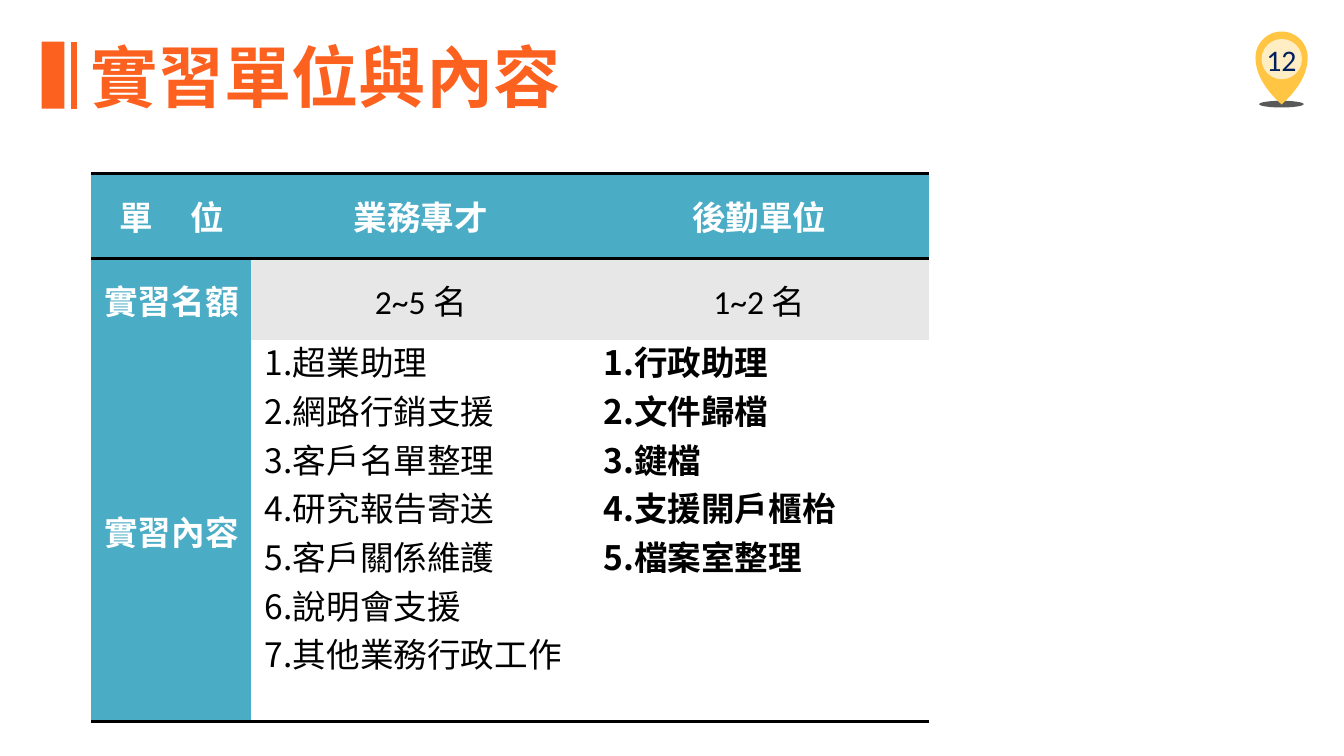
import math
from typing import NamedTuple

import lxml.etree
import pptx
import pptx.dml.color
import pptx.enum.shapes
import pptx.enum.text
import pptx.oxml
import pptx.oxml.ns
import pptx.util

Pt = pptx.util.Pt
Align = pptx.enum.text.PP_ALIGN
Anchor = pptx.enum.text.MSO_ANCHOR
ShapeType = pptx.enum.shapes.MSO_SHAPE
FONT = "Calibri"
COLORS = {
    "orange": "FC611F", "pin": "FFC543", "shadow": "595959", "navy": "002060",
    "teal": "4BACC6", "gray": "E7E7E7", "white": "FFFFFF", "black": "000000",
}
NO_STYLE_NO_GRID = "{2D5ABB26-0587-4C30-8999-92F81FD0307C}"


class Block(NamedTuple):
    kind: int
    left: float
    top: float
    width: float
    height: float
    color: str
    opacity: int = 100


class Cell(NamedTuple):
    lines: list[str]
    fill: str
    color: str
    bold: bool
    numbered: bool = False


class TableRow(NamedTuple):
    height: float
    cells: list[Cell]
    borders: list[str]


def heading(text: str) -> Cell:
    return Cell([text], "teal", "white", True)


def quota(text: str) -> Cell:
    return Cell([text], "gray", "black", False)


def duties(lines: list[str], bold: bool) -> Cell:
    return Cell(lines, "white", "black", bold, True)


BAR = Block(ShapeType.RECTANGLE, 22.3, 22.3, 12.2, 36, "orange")
PIN_SHADOW = Block(ShapeType.OVAL, 674.6, 54, 23.8, 3.6, "shadow")
PIN_WINDOW = Block(ShapeType.OVAL, 675.9, 20.9, 21.6, 21.6, "white", 69)
COLUMN_WIDTHS = [85.7, 181.4, 181.4]
ROWS = [
    TableRow(45.5, [heading("單\t位"), heading("業務專才"), heading("後勤單位")], ["lnT", "lnB"]),
    TableRow(44, [heading("實習名額"), quota("2~5 名"), quota("1~2 名")], []),
    TableRow(204, [
        heading("實習內容"),
        duties(["超業助理", "網路行銷支援", "客戶名單整理", "研究報告寄送",
                "客戶關係維護", "說明會支援", "其他業務行政工作"], False),
        duties(["行政助理", "文件歸檔", "鍵檔", "支援開戶櫃枱", "檔案室整理"], True),
    ], ["lnB"]),
]


def rgb(name: str) -> pptx.dml.color.RGBColor:
    return pptx.dml.color.RGBColor.from_string(COLORS[name])


def add_element(parent, tag: str, **attributes: str):
    return lxml.etree.SubElement(parent, pptx.oxml.ns.qn(tag), attributes)


def format_paragraph(paragraph, size: float, color: str, bold: bool = False,
                     alignment=Align.CENTER) -> None:
    paragraph.alignment = alignment
    font = paragraph.font
    font.name, font.size, font.bold = FONT, Pt(size), bold
    font.color.rgb = rgb(color)


def paint(shape, color: str) -> None:
    shape.shadow.inherit = False
    shape.fill.solid()
    shape.fill.fore_color.rgb = rgb(color)
    shape.line.fill.background()


def add_block(slide, block: Block) -> None:
    shape = slide.shapes.add_shape(block.kind, Pt(block.left), Pt(block.top),
                                   Pt(block.width), Pt(block.height))
    paint(shape, block.color)
    if block.opacity < 100:
        color = shape.fill._xPr.find(".//" + pptx.oxml.ns.qn("a:srgbClr"))
        add_element(color, "a:alpha", val=str(block.opacity * 1000))


def add_pin_body(slide, center_x: float, center_y: float, radius: float, tip_y: float) -> None:
    arc = [(radius * math.cos(angle), center_y - radius * math.sin(angle))
           for angle in (math.pi * step / 32 for step in range(33))]
    controls = [(radius, center_y), (radius, center_y + 11), (5.5, tip_y - 5), (0, tip_y)]
    side = []
    for step in range(1, 13):
        t = step / 12
        weights = [(1 - t) ** 3, 3 * t * (1 - t) ** 2, 3 * t * t * (1 - t), t ** 3]
        side.append(tuple(sum(weight * point[axis] for weight, point in zip(weights, controls))
                          for axis in (0, 1)))
    left_side = [(-x, y) for x, y in side]
    outline = [(Pt(center_x + x), Pt(y)) for x, y in arc + left_side + side[-2::-1]]
    builder = slide.shapes.build_freeform(*outline[0])
    builder.add_line_segments(outline[1:], close=True)
    paint(builder.convert_to_shape(), "pin")


def add_title(slide, text: str) -> None:
    title = slide.shapes.title
    title.left, title.top, title.width, title.height = Pt(39.6), Pt(15.1), Pt(269.3), Pt(51.1)
    frame = title.text_frame
    frame.text = text
    frame.word_wrap = False
    frame.auto_size = pptx.enum.text.MSO_AUTO_SIZE.SHAPE_TO_FIT_TEXT
    frame.vertical_anchor = Anchor.TOP
    format_paragraph(frame.paragraphs[0], 36, "orange", True)


def add_title_rule(slide) -> None:
    rule = slide.shapes.add_connector(pptx.enum.shapes.MSO_CONNECTOR.STRAIGHT,
                                      Pt(39.6), Pt(22.3), Pt(39.6), Pt(58.3))
    rule.line.color.rgb = rgb("orange")
    rule.line.width = Pt(3)
    add_element(rule._element.spPr, "a:effectLst")


def add_page_number(slide, text: str) -> None:
    box = slide.shapes.add_textbox(Pt(602.6), Pt(20.9), Pt(167.8), Pt(21.6))
    box.text_frame.word_wrap = True
    box.text_frame.vertical_anchor = Anchor.MIDDLE
    box.text_frame.text = text
    format_paragraph(box.text_frame.paragraphs[0], 16, "navy")


def fill_cell(cell, content: Cell, borders: list[str]) -> None:
    properties = cell._tc.get_or_add_tcPr()
    for border in borders:
        line = add_element(properties, "a:" + border, w=str(Pt(2)))
        add_element(add_element(line, "a:solidFill"), "a:srgbClr", val=COLORS["black"])
    cell.fill.solid()
    cell.fill.fore_color.rgb = rgb(content.fill)
    cell.text_frame.text = "\n".join(content.lines)
    if not content.numbered:
        cell.vertical_anchor = Anchor.MIDDLE
        cell.margin_left = cell.margin_right = cell.margin_top = cell.margin_bottom = 0
    for index, paragraph in enumerate(cell.text_frame.paragraphs):
        paragraph_properties = paragraph._p.get_or_add_pPr()
        if content.numbered:
            paragraph_properties.set("marL", str(Pt(14.4)))
            paragraph_properties.set("indent", str(Pt(-14.4)))
            add_element(paragraph_properties, "a:buAutoNum", type="arabicPeriod")
            if index == 0:
                paragraph.line_spacing = Pt(20.6)
        elif "\t" in content.lines[index]:
            tabs = add_element(paragraph_properties, "a:tabLst")
            add_element(tabs, "a:tab", pos=str(Pt(38.2)), algn="l")
        format_paragraph(paragraph, 18, content.color, content.bold,
                         Align.LEFT if content.numbered else Align.CENTER)


def add_internship_table(slide) -> None:
    frame = slide.shapes.add_table(len(ROWS), len(COLUMN_WIDTHS), Pt(49), Pt(92.9),
                                   Pt(sum(COLUMN_WIDTHS)), Pt(sum(row.height for row in ROWS)))
    table = frame.table
    table.first_row = table.horz_banding = False
    table._tbl.tblPr.find(pptx.oxml.ns.qn("a:tableStyleId")).text = NO_STYLE_NO_GRID
    for column, width in zip(table.columns, COLUMN_WIDTHS):
        column.width = Pt(width)
    for table_row, row in zip(table.rows, ROWS):
        table_row.height = Pt(row.height)
        for cell, content in zip(table_row.cells, row.cells):
            fill_cell(cell, content, row.borders)


def main() -> None:
    presentation = pptx.Presentation()
    presentation.slide_width, presentation.slide_height = Pt(720), Pt(405)
    slide = presentation.slides.add_slide(presentation.slide_layouts[5])
    add_block(slide, PIN_SHADOW)
    add_pin_body(slide, 686.6, 30.9, 14, 56)
    add_block(slide, PIN_WINDOW)
    add_block(slide, BAR)
    add_title_rule(slide)
    add_title(slide, "實習單位與內容")
    add_page_number(slide, "12")
    add_internship_table(slide)
    presentation.save("out.pptx")


if __name__ == "__main__":
    main()
